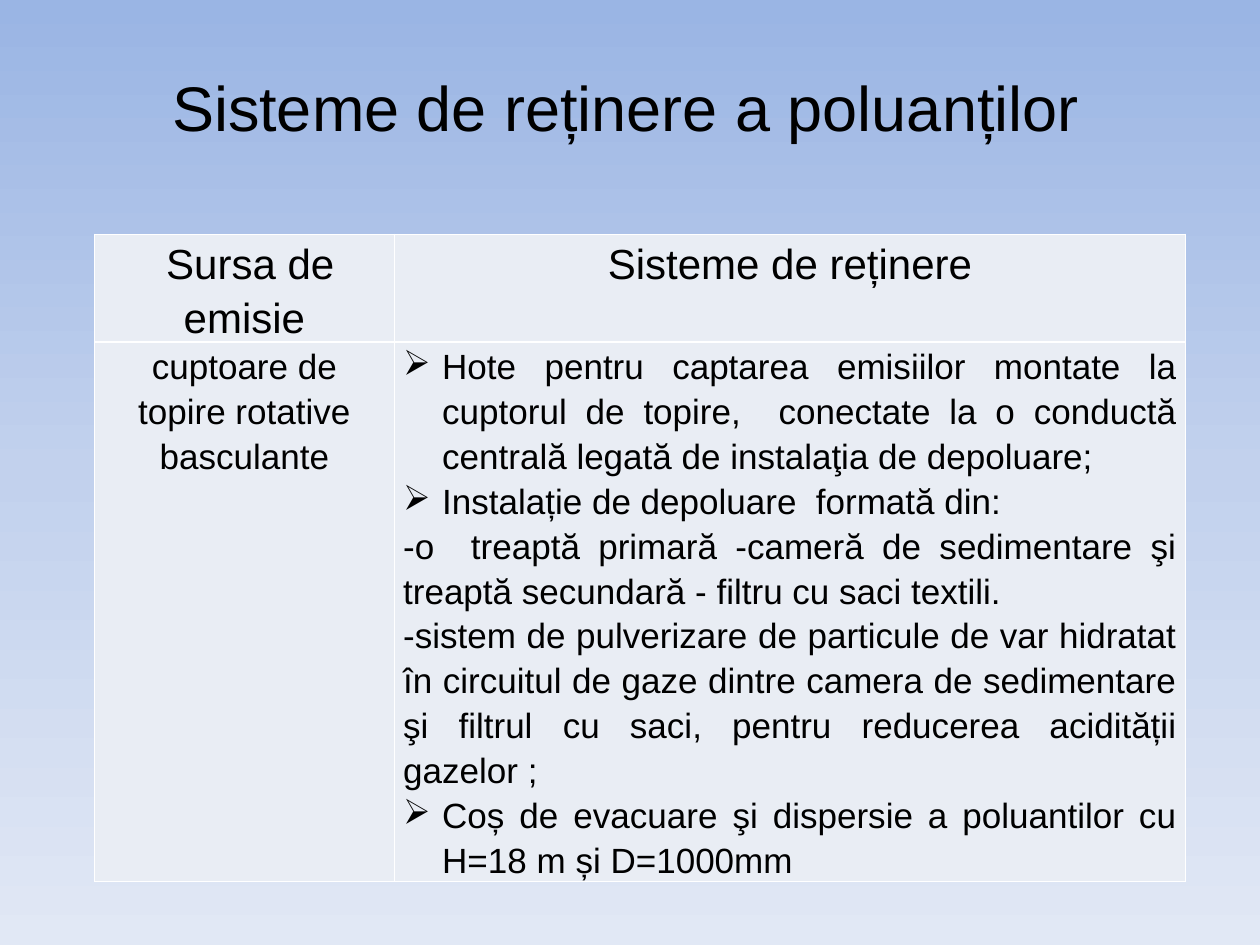
from copy import deepcopy

from pptx import Presentation, util as u
from pptx.dml.color import RGBColor
from pptx.enum import text
from pptx.oxml import parse_xml
from pptx.oxml.ns import nsdecls, qn

BLACK = RGBColor(0x00, 0x00, 0x00)
CELL_FILL = RGBColor(0xE9, 0xED, 0xF4)
SKY = [
    (0, RGBColor(0x9A, 0xB5, 0xE4)),
    (0.5, RGBColor(0xC2, 0xD1, 0xED)),
    (1, RGBColor(0xE1, 0xE8, 0xF5)),
]
FONT = "Arial"
CENTER = text.PP_ALIGN.CENTER
JUSTIFY = text.PP_ALIGN.JUSTIFY
BULLET = "➢"
INDENT = u.Inches(0.31)
COLUMNS = [2.38, 6.28]
ROWS = [0.85, 4.28]

SYSTEMS = [
    BULLET + "Hote pentru captarea emisiilor montate la cuptorul de topire,  conectate la o conductă centrală legată de instalaţia de depoluare;",
    BULLET + "Instalație de depoluare  formată din:",
    "-o  treaptă primară -cameră de sedimentare şi treaptă secundară - filtru cu saci textili.",
    "-sistem de pulverizare de particule de var hidratat în circuitul de gaze dintre camera de sedimentare şi filtrul cu saci, pentru reducerea acidității gazelor ;",
    BULLET + "Coș de evacuare şi dispersie a poluantilor cu H=18 m și D=1000mm",
]
CELLS = [
    (0, 0, 24, CENTER, [" Sursa de emisie"]),
    (0, 1, 24, CENTER, ["Sisteme de reținere"]),
    (1, 0, 20, CENTER, ["cuptoare de topire rotative basculante"]),
    (1, 1, 20, JUSTIFY, SYSTEMS),
]


def style_paragraph(para, size, alignment):
    para.alignment = alignment
    para.font.name = FONT
    para.font.size = u.Pt(size)
    para.font.bold = False
    para.font.color.rgb = BLACK


deck = Presentation()
deck.slide_width = u.Inches(10)
deck.slide_height = u.Inches(7.5)
page = deck.slides.add_slide(deck.slide_layouts.get_by_name("Title Only"))

sky = page.background.fill
sky.gradient()
sky.gradient_angle = 270
stop_list = page.element.find(".//" + qn("a:gsLst"))
stop_list.insert(1, deepcopy(stop_list[0]))
for stop, (position, color) in zip(sky.gradient_stops, SKY):
    stop.position = position
    stop.color.rgb = color

title = page.shapes.title
title.left, title.top = u.Inches(0.43), u.Inches(0.3)
title.width, title.height = u.Inches(9.07), u.Inches(1.09)
title.text_frame.text = "Sisteme de reținere a poluanților"
title.text_frame.vertical_anchor = text.MSO_ANCHOR.MIDDLE
style_paragraph(title.text_frame.paragraphs[0], 36, CENTER)

table = page.shapes.add_table(
    len(ROWS), len(COLUMNS), u.Inches(0.75), u.Inches(1.86),
    u.Inches(sum(COLUMNS)), u.Inches(sum(ROWS)),
).table
for column, width in zip(table.columns, COLUMNS):
    column.width = u.Inches(width)
for row, height in zip(table.rows, ROWS):
    row.height = u.Inches(height)

for row, column, size, alignment, lines in CELLS:
    cell = table.cell(row, column)
    cell.margin_left = cell.margin_right = u.Inches(0.07)
    cell.margin_top = cell.margin_bottom = 0
    cell.fill.solid()
    cell.fill.fore_color.rgb = CELL_FILL
    properties = cell._tc.get_or_add_tcPr()
    for index, side in enumerate("LRTB"):
        properties.insert(index, parse_xml(
            f'<a:ln{side} {nsdecls("a")} w="12700"><a:solidFill>'
            f'<a:srgbClr val="FFFFFF"/></a:solidFill></a:ln{side}>'
        ))

    cell.text_frame.text = "\n".join(line.removeprefix(BULLET) for line in lines)
    for para, line in zip(cell.text_frame.paragraphs, lines):
        style_paragraph(para, size, alignment)
        para.line_spacing = 1.15
        if line.startswith(BULLET):
            settings = para._p.get_or_add_pPr()
            settings.set("marL", str(INDENT))
            settings.set("indent", str(-INDENT))
            mark = parse_xml(f'<a:buChar {nsdecls("a")} char="{BULLET}"/>')
            settings.find(qn("a:defRPr")).addprevious(mark)

deck.save("out.pptx")
